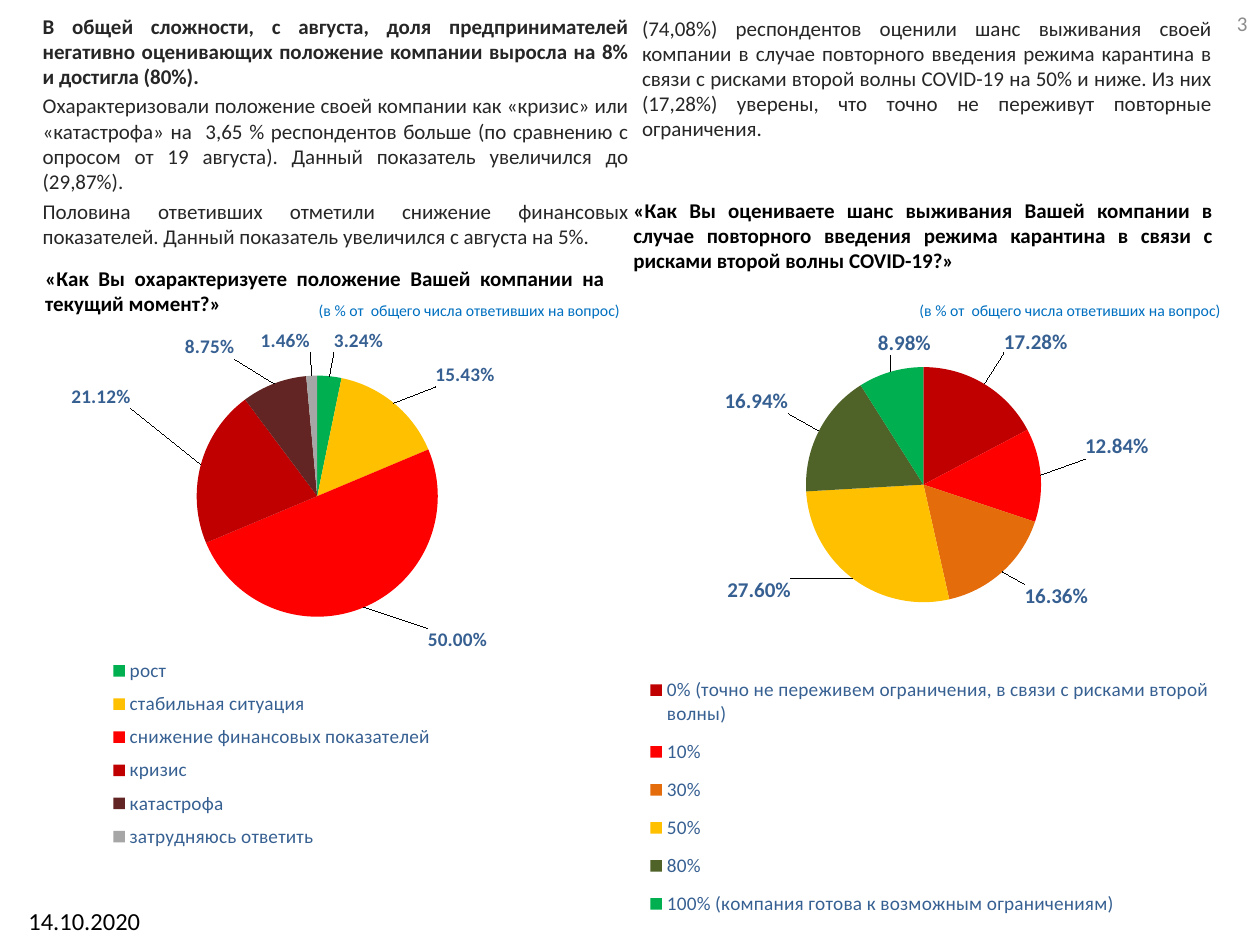
from pptx import Presentation
from pptx import util as u
from pptx.chart import data as chart_data
from pptx.dml import color
from pptx.enum import chart as charts, text
from pptx.oxml import parse_xml
from pptx.oxml.ns import nsdecls

FONT = "Calibri"
INK, BLACK, LABEL, NOTE, GREY = "262626", "000000", "376092", "0070C0", "8C8C8C"
JUSTIFY = text.PP_ALIGN.JUSTIFY
NOTE_TEXT = "(в % от  общего числа ответивших на вопрос)"


def rgb(value):
    return color.RGBColor.from_string(value)


def style_font(font, size, ink, bold=False):
    font.name, font.size, font.bold = FONT, u.Pt(size), bold
    font.color.rgb = rgb(ink)


def place(left, top, width, height):
    return [u.Pt(value) for value in (left, top, width, height)]


def add_text(page, bounds, lines, size=12, ink=BLACK, align=JUSTIFY,
             anchor=text.MSO_ANCHOR.TOP, before=2.4, wrap=True):
    box = page.shapes.add_textbox(*place(*bounds))
    frame = box.text_frame
    frame.word_wrap = wrap
    frame.vertical_anchor = anchor
    for index, (line, bold) in enumerate(lines):
        para = frame.paragraphs[0] if index == 0 else frame.add_paragraph()
        para.text = line
        para.alignment = align
        para.space_before = u.Pt(before)
        style_font(para.font, size, ink, bold)


def manual_layout(x, y, width=None, height=None, inner=False):
    parts = [("layoutTarget", "inner")] if inner else []
    if width is not None:
        parts += [("xMode", "edge"), ("yMode", "edge")]
    parts += [("x", x), ("y", y)]
    if width is not None:
        parts += [("w", width), ("h", height)]
    body = "".join(f'<c:{tag} val="{value}"/>' for tag, value in parts)
    return parse_xml(f'<c:layout {nsdecls("c")}><c:manualLayout>{body}'
                     '</c:manualLayout></c:layout>')


def set_layout(parent, index, layout):
    for old in parent.xpath("c:layout"):
        parent.remove(old)
    parent.insert(index, layout)


def add_pie(page, bounds, slices, plot_area, legend_area, label_size):
    left, top, width, height = bounds
    data = chart_data.CategoryChartData(number_format="0.00%")
    data.categories = [name for name, *_ in slices]
    data.add_series("Series 1", [value for _, value, *_ in slices])
    chart = page.shapes.add_chart(charts.XL_CHART_TYPE.PIE, *place(*bounds), data).chart
    chart.has_title = False
    style_font(chart.font, 10, BLACK)

    chart.has_legend = True
    legend = chart.legend
    legend.position = charts.XL_LEGEND_POSITION.BOTTOM
    legend.include_in_layout = False
    style_font(legend.font, 11, LABEL)

    series = chart.plots[0].series[0]
    labels = series.data_labels
    labels.show_value = True
    labels.number_format = "0.00%"
    labels.number_format_is_linked = False
    labels.position = charts.XL_LABEL_POSITION.OUTSIDE_END
    style_font(labels.font, label_size, LABEL, True)
    for index, (_, _, fill, _) in enumerate(slices):
        point = series.points[index]
        point.format.fill.solid()
        point.format.fill.fore_color.rgb = rgb(fill)
        point.data_label.position = charts.XL_LABEL_POSITION.OUTSIDE_END
        style_font(point.data_label.font, label_size, LABEL, True)

    root = chart.element
    for label, (*_, (dx, dy)) in zip(root.xpath(".//c:dLbl"), slices):
        set_layout(label, 1, manual_layout(round(dx / width, 3), round(dy / height, 3)))
    set_layout(root.xpath(".//c:plotArea")[0], 0, manual_layout(*plot_area, inner=True))
    set_layout(root.xpath(".//c:legend")[0], 1, manual_layout(*legend_area))


def add_note(page, left, top):
    add_text(page, (left, top, 187.9, 18), [(NOTE_TEXT, False)], 9, NOTE,
             text.PP_ALIGN.LEFT, before=0, wrap=False)


def add_situation(page, left, top):
    add_text(page, (left + 3.6, top + 60.5, 349.2, 85), [
        ("В общей сложности, с августа, доля предпринимателей негативно оценивающих "
         "положение компании выросла на 8% и достигла (80%).", True),
        ("Охарактеризовали положение своей компании как «кризис» или «катастрофа» на  3,65 % "
         "респондентов больше (по сравнению с опросом от 19 августа). Данный показатель "
         "увеличился до (29,87%).", False),
        ("Половина ответивших отметили снижение финансовых показателей. Данный показатель "
         "увеличился с августа на 5%.", False),
    ], ink=INK, anchor=text.MSO_ANCHOR.BOTTOM)
    add_text(page, (left + 5, top + 148.3, 334, 79.2), [
        ("«Как Вы охарактеризуете положение Вашей компании на текущий момент?»", True)])
    add_note(page, left + 161.3, top + 168.5)
    add_pie(page, (left, top + 186.5, 345.6, 313.2), [
        ("рост", 0.0324, "00B050", (2, -9)),
        ("стабильная ситуация", 0.1543, "FFC000", (21, -6)),
        ("снижение финансовых показателей", 0.5, "FF0000", (35, 8)),
        ("кризис", 0.2112, "C00000", (-36, -31)),
        ("катастрофа", 0.0875, "632523", (-21, -10)),
        ("затрудняюсь ответить", 0.0146, "A6A6A6", (-15, -9)),
    ], (0.09, 0.09, 0.79, 0.44), (0.11, 0.59, 0.6, 0.38), 11)


def add_survival(page, left, top):
    add_text(page, (left + 20, top + 25.2, 340, 59), [
        ("(74,08%) респондентов оценили шанс выживания своей компании в случае повторного "
         "введения режима карантина в связи с рисками второй волны COVID-19 на 50% и ниже. "
         "Из них (17,28%) уверены, что точно не переживут повторные ограничения.", False),
    ], ink=INK, anchor=text.MSO_ANCHOR.BOTTOM)
    add_text(page, (left + 15, top + 109.4, 345.6, 86.4), [
        ("«Как Вы оцениваете шанс выживания Вашей компании в случае повторного введения "
         "режима карантина в связи с рисками второй волны COVID-19?»", True)])
    add_pie(page, (left, top + 188.6, 365, 353.5), [
        ("0% (точно не переживем ограничения, в связи с рисками второй волны)",
         0.1728, "C00000", (9, -14)),
        ("10%", 0.1284, "FF0000", (21, -16)),
        ("30%", 0.1636, "E46C0A", (10, 4)),
        ("50%", 0.276, "FFC000", (-33, -4)),
        ("80%", 0.1694, "4F6228", (-14, -8)),
        ("100% (компания готова к возможным ограничениям)", 0.0898, "00B050", (24, -5)),
    ], (0.16, 0.06, 0.71, 0.38), (0.07, 0.54, 0.91, 0.43), 12)
    add_note(page, left + 178.5, top + 168.5)


def add_footer(page, width, height):
    add_text(page, (width - 167.8, -1.4, 167.8, 28.8), [("3", False)], 12, GREY,
             text.PP_ALIGN.RIGHT, text.MSO_ANCHOR.MIDDLE, before=0)
    add_text(page, (0, height - 26, 96.5, 26), [("14.10.2020", False)], 14,
             align=text.PP_ALIGN.CENTER, before=2.8)


def main():
    deck = Presentation()
    deck.slide_width, deck.slide_height = u.Pt(720), u.Pt(540)
    page = deck.slides.add_slide(deck.slide_layouts[6])
    add_situation(page, 13.7, 0)
    add_survival(page, 339.8, 0)
    add_footer(page, 720, 540)
    deck.save("out.pptx")


if __name__ == "__main__":
    main()
